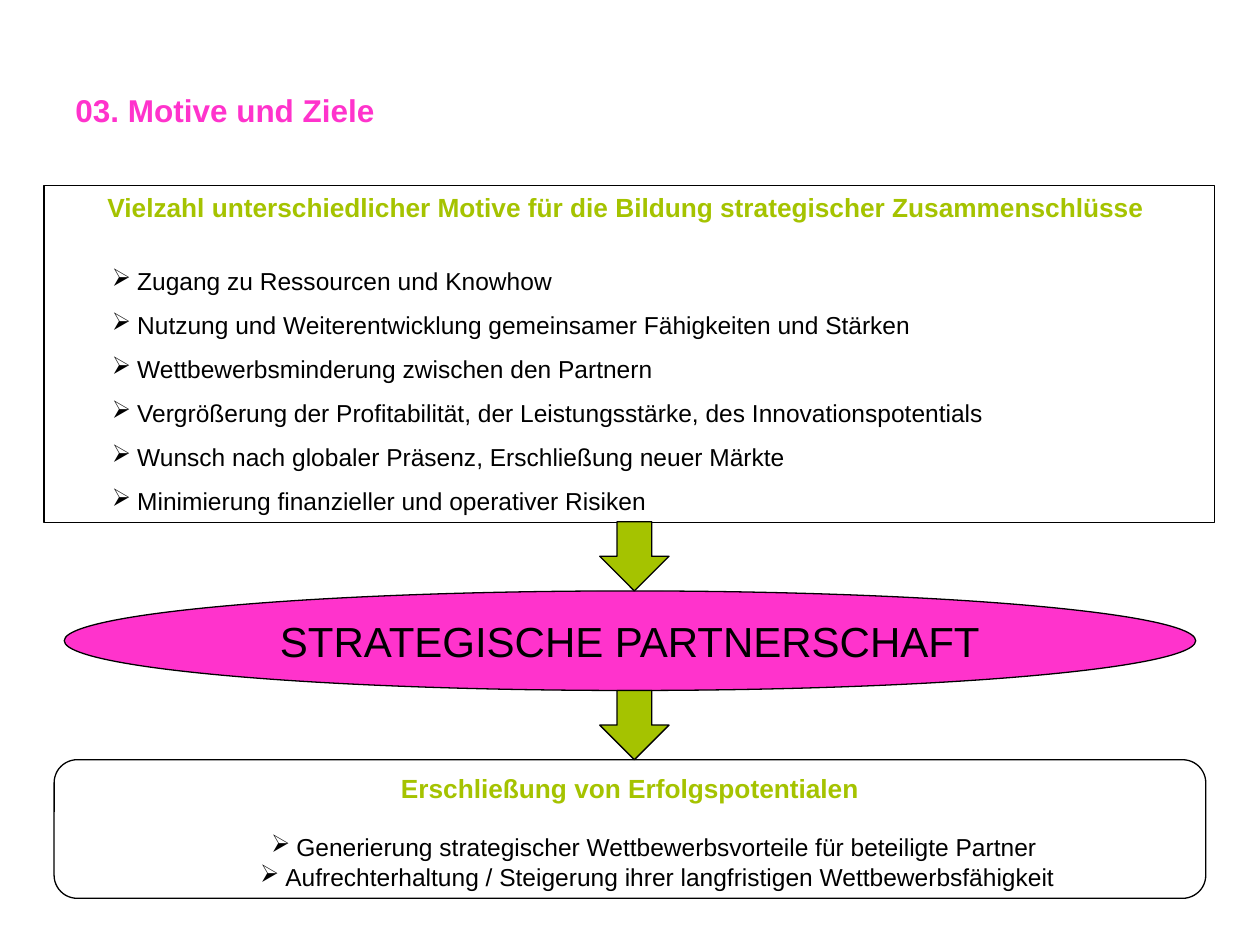
from dataclasses import dataclass
from typing import Optional

from lxml import etree
from pptx import Presentation
from pptx import util as u
from pptx.dml.color import RGBColor
from pptx.enum import shapes, text
from pptx.oxml import ns

FONT = "Arial"
PINK, GREEN, BLACK, WHITE = "FF33CC", "A5C300", "000000", "FFFFFF"
LEFT, CENTER = text.PP_ALIGN.LEFT, text.PP_ALIGN.CENTER
TOP, MIDDLE = text.MSO_ANCHOR.TOP, text.MSO_ANCHOR.MIDDLE
SHAPE = shapes.MSO_SHAPE


@dataclass
class Line:
    wording: str
    size: float
    color: str = BLACK
    bold: bool = False
    align: int = CENTER
    margin: float = 0
    hanging: float = 0
    bullet: Optional[str] = None
    spacing: float = 1
    before: float = 0


@dataclass
class Block:
    kind: int
    left: float
    top: float
    width: float
    height: float
    fill: str
    lines: tuple[Line, ...] = ()
    anchor: int = TOP


def rgb(value: str) -> RGBColor:
    return RGBColor.from_string(value)


def write_lines(frame, lines: tuple[Line, ...], anchor: int) -> None:
    frame.word_wrap = True
    frame.vertical_anchor = anchor
    for number, line in enumerate(lines):
        para = frame.paragraphs[0] if number == 0 else frame.add_paragraph()
        properties = para._p.get_or_add_pPr()
        properties.set("marL", str(u.Inches(line.margin)))
        properties.set("indent", str(-u.Inches(line.hanging)))
        if line.bullet:
            mark = etree.SubElement(properties, ns.qn("a:buChar"))
            mark.set("char", line.bullet)
        para.alignment = line.align
        para.line_spacing = line.spacing
        if line.before:
            para.space_before = u.Pt(line.before)
        span = para.add_run()
        span.text = line.wording
        span.font.name = FONT
        span.font.size = u.Pt(line.size)
        span.font.bold = line.bold
        span.font.color.rgb = rgb(line.color)


def draw_block(page, block: Block) -> None:
    bounds = (block.left, block.top, block.width, block.height)
    shape = page.shapes.add_shape(block.kind, *map(u.Inches, bounds))
    shape.shadow.inherit = False
    shape.fill.solid()
    shape.fill.fore_color.rgb = rgb(block.fill)
    shape.line.color.rgb = rgb(BLACK)
    shape.line.width = u.Pt(0.75)
    write_lines(shape.text_frame, block.lines, block.anchor)


def heading(wording: str) -> Line:
    return Line(wording, 15, GREEN, True, margin=0.2, hanging=0.2)


def bullets(items: list[str], align: int, spacing: float) -> tuple[Line, ...]:
    """Bulleted lines, with a gap between the heading and the first one."""
    return tuple(
        Line(item, 14, align=align, margin=0.64, hanging=0.2, bullet="➢",
             spacing=spacing, before=16 if number == 0 else 0)
        for number, item in enumerate(items)
    )


MOTIVES = [
    "Zugang zu Ressourcen und Knowhow",
    "Nutzung und Weiterentwicklung gemeinsamer Fähigkeiten und Stärken",
    "Wettbewerbsminderung zwischen den Partnern",
    "Vergrößerung der Profitabilität, der Leistungsstärke, des Innovationspotentials",
    "Wunsch nach globaler Präsenz, Erschließung neuer Märkte",
    "Minimierung finanzieller und operativer Risiken",
]
GOALS = [
    "Generierung strategischer Wettbewerbsvorteile für beteiligte Partner ",
    "Aufrechterhaltung / Steigerung ihrer langfristigen Wettbewerbsfähigkeit",
]
MOTIVE_HEADING = ("Vielzahl unterschiedlicher Motive für die Bildung "
                  "strategischer Zusammenschlüsse ")

BLOCKS = [
    # Motives
    Block(SHAPE.RECTANGLE, 0.35, 1.47, 9.29, 2.68, WHITE,
          (heading(MOTIVE_HEADING), *bullets(MOTIVES, LEFT, 1.5))),
    # Partnership
    Block(SHAPE.OVAL, 0.51, 4.69, 8.98, 0.79, PINK,
          (Line("STRATEGISCHE PARTNERSCHAFT", 24),), MIDDLE),
    # Goals
    Block(SHAPE.ROUNDED_RECTANGLE, 0.43, 6.03, 9.14, 1.1, WHITE,
          (heading("Erschließung von Erfolgspotentialen"),
           *bullets(GOALS, CENTER, 1))),
    # Arrows between the three stages
    *(Block(SHAPE.DOWN_ARROW, 4.76, top, 0.55, 0.55, GREEN)
      for top in (4.14, 5.48)),
]


def main() -> None:
    deck = Presentation()
    deck.slide_width, deck.slide_height = u.Inches(10), u.Inches(7.5)
    page = deck.slides.add_slide(deck.slide_layouts[6])

    # Title
    box = page.shapes.add_textbox(*map(u.Inches, (0.5, 0.67, 5.42, 1.25)))
    title = Line("03. Motive und Ziele", 18, PINK, True, LEFT)
    write_lines(box.text_frame, (title,), TOP)

    for block in BLOCKS:
        draw_block(page, block)

    deck.save("out.pptx")


if __name__ == "__main__":
    main()
